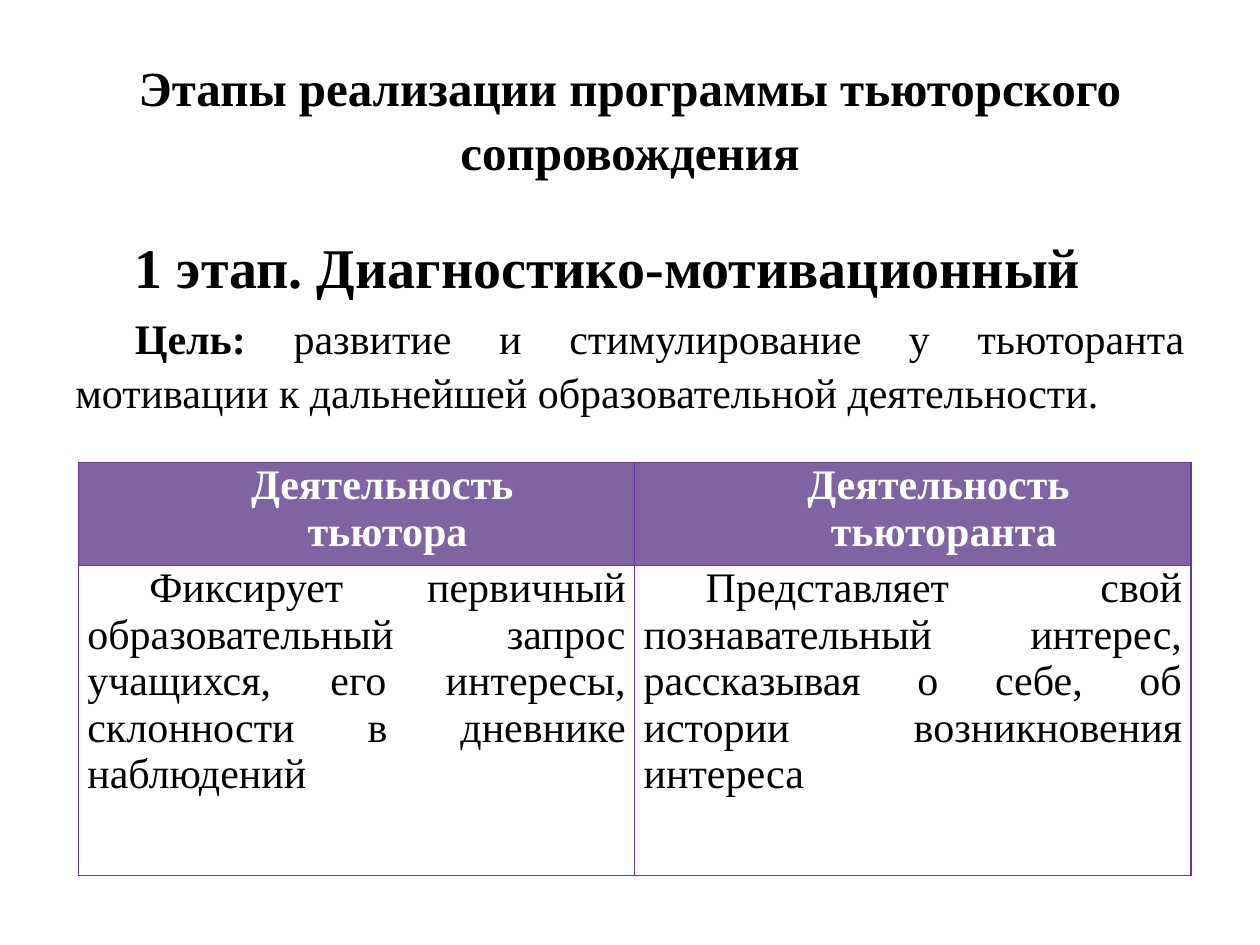
from dataclasses import dataclass

from lxml.etree import SubElement
from pptx import Presentation
from pptx.dml.color import RGBColor
from pptx.enum.text import MSO_ANCHOR, PP_ALIGN
from pptx.oxml.ns import qn
from pptx.util import Cm, Pt


@dataclass(frozen=True)
class Theme:
    font: str = "Times New Roman"
    text: str = "000000"
    header_text: str = "FFFFFF"
    header_fill: str = "8064A2"
    body_fill: str = "FFFFFF"
    border: str = "7030A0"
    title_size: int = 28
    stage_size: int = 32
    text_size: int = 24
    border_width: int = 1
    line_spacing: float = 1.08


@dataclass(frozen=True)
class Span:
    text: str
    size: int
    bold: bool = False


@dataclass(frozen=True)
class Area:
    left: float
    top: float
    width: float
    height: float

    def lengths(self) -> tuple:
        return Cm(self.left), Cm(self.top), Cm(self.width), Cm(self.height)


@dataclass(frozen=True)
class Activity:
    heading: tuple[str, ...]
    description: str


THEME = Theme()
TITLE_AREA = Area(1.27, 0.76, 22.86, 3.18)
STAGE_AREA = Area(1.27, 4.45, 22.86, 4.09)
TABLE_AREA = Area(1.58, 9.32, 22.43, 8.33)
ROW_HEIGHTS = (2.08, 6.25)
CELL_MARGIN = 0.18
STAGE_INDENT = 1.2
CELL_INDENT = 1.25

TITLE = Span("Этапы реализации программы тьюторского сопровождения", THEME.title_size, True)
STAGE = Span("1 этап. Диагностико-мотивационный", THEME.stage_size, True)
GOAL = (
    Span("Цель: ", THEME.text_size, True),
    Span(
        "развитие и стимулирование у тьюторанта мотивации "
        "к дальнейшей образовательной деятельности.",
        THEME.text_size,
    ),
)
ACTIVITIES = (
    Activity(
        ("Деятельность ", "тьютора"),
        "Фиксирует первичный образовательный запрос учащихся, "
        "его интересы, склонности в дневнике наблюдений",
    ),
    Activity(
        ("Деятельность ", "тьюторанта"),
        "Представляет свой познавательный интерес, "
        "рассказывая о себе, об истории возникновения интереса",
    ),
)


def write_paragraph(paragraph, spans: tuple[Span, ...], align: PP_ALIGN,
                    color: str = THEME.text, indent: float = 0) -> None:
    paragraph.alignment = align
    if indent:
        properties = paragraph._p.get_or_add_pPr()
        properties.set("marL", "0")
        properties.set("indent", str(Cm(indent)))
    for span in spans:
        run = paragraph.add_run()
        run.text = span.text
        run.font.name = THEME.font
        run.font.size = Pt(span.size)
        run.font.bold = span.bold
        run.font.color.rgb = RGBColor.from_string(color)


def add_text_box(page, area: Area, anchor: MSO_ANCHOR):
    frame = page.shapes.add_textbox(*area.lengths()).text_frame
    frame.word_wrap = True
    frame.vertical_anchor = anchor
    return frame


def add_title(page) -> None:
    paragraph = add_text_box(page, TITLE_AREA, MSO_ANCHOR.MIDDLE).paragraphs[0]
    write_paragraph(paragraph, (TITLE,), PP_ALIGN.CENTER)
    paragraph.line_spacing = THEME.line_spacing


def add_stage(page) -> None:
    frame = add_text_box(page, STAGE_AREA, MSO_ANCHOR.TOP)
    heading, goal = frame.paragraphs[0], frame.add_paragraph()
    write_paragraph(heading, (STAGE,), PP_ALIGN.LEFT, indent=STAGE_INDENT)
    write_paragraph(goal, GOAL, PP_ALIGN.JUSTIFY, indent=STAGE_INDENT)
    goal.space_before = Pt(5)
    for paragraph in frame.paragraphs:
        paragraph.line_spacing = THEME.line_spacing


def add_borders(cell) -> None:
    properties = cell._tc.get_or_add_tcPr()
    for side in ("a:lnL", "a:lnR", "a:lnT", "a:lnB"):
        line = SubElement(properties, qn(side), w=str(Pt(THEME.border_width)))
        fill = SubElement(line, qn("a:solidFill"))
        SubElement(fill, qn("a:srgbClr"), val=THEME.border)


def fill_cell(cell, lines: tuple[str, ...], is_header: bool) -> None:
    add_borders(cell)
    cell.fill.solid()
    fill = THEME.header_fill if is_header else THEME.body_fill
    cell.fill.fore_color.rgb = RGBColor.from_string(fill)
    cell.margin_left = cell.margin_right = Cm(CELL_MARGIN)
    cell.margin_top = cell.margin_bottom = Cm(0)
    align = PP_ALIGN.CENTER if is_header else PP_ALIGN.JUSTIFY
    color = THEME.header_text if is_header else THEME.text
    frame = cell.text_frame
    for index, line in enumerate(lines):
        paragraph = frame.add_paragraph() if index else frame.paragraphs[0]
        span = Span(line, THEME.text_size, is_header)
        write_paragraph(paragraph, (span,), align, color, CELL_INDENT)


def add_activity_table(page) -> None:
    table = page.shapes.add_table(
        len(ROW_HEIGHTS), len(ACTIVITIES), *TABLE_AREA.lengths()
    ).table
    table.horz_banding = False
    for row, height in zip(table.rows, ROW_HEIGHTS):
        row.height = Cm(height)
    for column, activity in enumerate(ACTIVITIES):
        fill_cell(table.cell(0, column), activity.heading, True)
        fill_cell(table.cell(1, column), (activity.description,), False)


def main() -> None:
    deck = Presentation()
    deck.slide_width, deck.slide_height = Cm(25.4), Cm(19.05)
    page = deck.slides.add_slide(deck.slide_layouts[6])
    add_title(page)
    add_stage(page)
    add_activity_table(page)
    deck.save("out.pptx")


if __name__ == "__main__":
    main()
